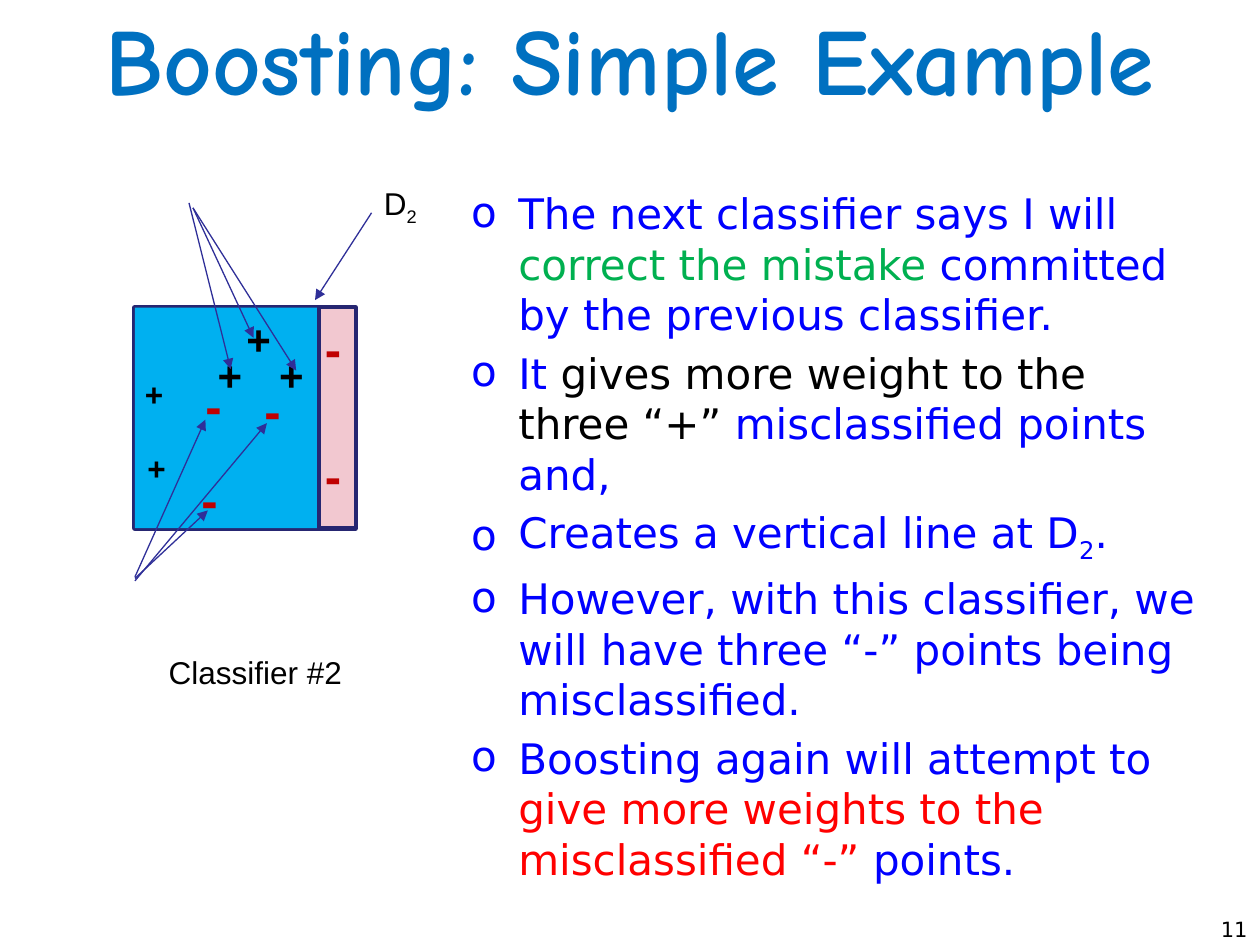
import dataclasses

import pptx
import pptx.dml.color
import pptx.enum.shapes
import pptx.enum.text
import pptx.oxml
import pptx.oxml.ns
import pptx.util

Cm = pptx.util.Cm
Pt = pptx.util.Pt
ALIGN = pptx.enum.text.PP_ALIGN
ANCHOR = pptx.enum.text.MSO_ANCHOR


@dataclasses.dataclass(frozen=True)
class Theme:
    title_font: str = "Comic Neue"
    body_font: str = "DejaVu Sans"
    label_font: str = "Arial"
    title_size: int = 54
    body_size: int = 24
    label_size: int = 18
    page_size: int = 12
    heavy_plus_size: int = 24
    minus_size: int = 28
    title: str = "0070C0"
    body: str = "0000FF"
    black: str = "000000"
    green: str = "00B050"
    red: str = "FF0000"
    minus: str = "C00000"
    plus_side: str = "00B0F0"
    minus_side: str = "F2C8D0"
    border: str = "262671"
    arrow: str = "2F2F98"


THEME = Theme()

# Each bullet is a list of runs: (text, colour, is subscript)
BULLETS = [
    [("The next classifier says I will ", THEME.body, False),
     ("correct the mistake ", THEME.green, False),
     ("committed by the previous classifier.", THEME.body, False)],
    [("It ", THEME.body, False),
     ("gives more weight to the three “+”", THEME.black, False),
     (" misclassified points and,", THEME.body, False)],
    [("Creates a vertical line at D", THEME.body, False),
     ("2", THEME.body, True),
     (".", THEME.body, False)],
    [("However, with this classifier, we will have three “-” points being "
      "misclassified.", THEME.body, False)],
    [("Boosting again will attempt to ", THEME.body, False),
     ("give more weights to the misclassified “-”", THEME.red, False),
     (" points.", THEME.body, False)],
]

# The square of sample points, in cm
SQUARE_LEFT, SQUARE_TOP, SQUARE_SIDE = 2.72, 6.2, 4.45
SQUARE_RIGHT = SQUARE_LEFT + SQUARE_SIDE
FIRST_SPLIT, SECOND_SPLIT = 3.77, 6.43

HEAVY_PLUSES = [(5.38, 6.93), (4.72, 6.2), (4.14, 6.93)]
LIGHT_PLUSES = [(2.72, 8.92), (2.67, 7.44)]
WRONG_MINUSES = [(5.08, 7.54), (3.81, 9.35), (3.89, 7.44)]
RIGHT_MINUSES = [(6.3, 6.3), (6.3, 8.86)]

ARROWS = [
    # Towards the second split
    ((7.49, 4.29), (6.35, 6.05)),
    # Towards the misclassified minuses
    ((2.72, 11.63), (4.14, 8.46)),
    ((2.72, 11.66), (4.19, 10.29)),
    ((2.72, 11.71), (5.38, 8.53)),
    # Towards the heavier pluses
    ((3.81, 4.09), (4.65, 7.44)),
    ((3.89, 4.19), (5.11, 6.81)),
    ((3.89, 4.19), (5.97, 7.47)),
]


def rgb(colour):
    return pptx.dml.color.RGBColor.from_string(colour)


def add_bullet(paragraph, font):
    properties = paragraph._p.get_or_add_pPr()
    properties.set("marL", str(Cm(0.95)))
    properties.set("indent", str(-Cm(0.95)))
    for tag, key, value in (("a:buFont", "typeface", font), ("a:buChar", "char", "o")):
        mark = pptx.oxml.parse_xml(f"<{tag} {pptx.oxml.ns.nsdecls('a')}/>")
        mark.set(key, value)
        properties.append(mark)


def add_text(slide, paragraphs, left, top, width, height, *, size, font,
             bold=False, align=ALIGN.LEFT, anchor=ANCHOR.TOP, wrap=True, bullets=False):
    frame = slide.shapes.add_textbox(Cm(left), Cm(top), Cm(width), Cm(height)).text_frame
    frame.word_wrap = wrap
    frame.vertical_anchor = anchor
    if not wrap:
        frame.auto_size = pptx.enum.text.MSO_AUTO_SIZE.SHAPE_TO_FIT_TEXT
    for number, runs in enumerate(paragraphs):
        paragraph = frame.add_paragraph() if number else frame.paragraphs[0]
        paragraph.alignment = align
        if bullets:
            paragraph.space_before = Pt(size * 0.2)
            add_bullet(paragraph, font)
        for words, colour, subscript in runs:
            run = paragraph.add_run()
            run.text = words
            run.font.size = Pt(size)
            run.font.name = font
            run.font.bold = bold
            run.font.color.rgb = rgb(colour)
            if subscript:
                run._r.get_or_add_rPr().set("baseline", "-25000")


def add_region(slide, left, right, fill=None, border_width=None):
    region = slide.shapes.add_shape(
        pptx.enum.shapes.MSO_SHAPE.RECTANGLE,
        Cm(left), Cm(SQUARE_TOP), Cm(right - left), Cm(SQUARE_SIDE))
    region.shadow.inherit = False
    if fill:
        region.fill.solid()
        region.fill.fore_color.rgb = rgb(fill)
    else:
        region.fill.background()
    if border_width:
        region.line.color.rgb = rgb(THEME.border)
        region.line.width = Pt(border_width)
    else:
        region.line.fill.background()


def add_marks(slide, sign, places, width, height, size, colour):
    for left, top in places:
        add_text(slide, [[(sign, colour, False)]], left, top, width, height,
                 size=size, font=THEME.label_font, bold=True, wrap=False)


def add_minuses(slide, places):
    add_marks(slide, "-", places, 0.84, 1.45, THEME.minus_size, THEME.minus)


def add_arrow(slide, start, end):
    arrow = slide.shapes.add_connector(
        pptx.enum.shapes.MSO_CONNECTOR.STRAIGHT, *map(Cm, start), *map(Cm, end))
    arrow.line.color.rgb = rgb(THEME.arrow)
    arrow.line.width = Pt(0.75)
    namespace = pptx.oxml.ns.nsdecls("a")
    arrow.line._get_or_add_ln().append(
        pptx.oxml.parse_xml(f'<a:tailEnd {namespace} type="triangle"/>'))
    arrow._element.spPr.append(pptx.oxml.parse_xml(f"<a:effectLst {namespace}/>"))


def main():
    deck = pptx.Presentation()
    deck.slide_width, deck.slide_height = Cm(25.4), Cm(19.05)
    slide = deck.slides.add_slide(deck.slide_layouts[6])

    # Title and page number
    add_text(slide, [[("Boosting: Simple Example", THEME.title, False)]], 0, 0, 25.4, 2.34,
             size=THEME.title_size, font=THEME.title_font, bold=True,
             align=ALIGN.CENTER, anchor=ANCHOR.MIDDLE)
    add_text(slide, [[("11", THEME.black, False)]], 23.83, 18.42, 1.57, 0.63,
             size=THEME.page_size, font=THEME.body_font,
             align=ALIGN.RIGHT, anchor=ANCHOR.MIDDLE)

    # Regions with their points
    add_region(slide, SQUARE_LEFT, SQUARE_RIGHT, border_width=3.25)
    add_region(slide, SQUARE_LEFT, FIRST_SPLIT, fill=THEME.plus_side)
    add_region(slide, FIRST_SPLIT, SQUARE_RIGHT, fill=THEME.plus_side)
    add_marks(slide, "+", HEAVY_PLUSES, 1.02, 1.27, THEME.heavy_plus_size, THEME.black)
    add_marks(slide, "+", LIGHT_PLUSES, 0.89, 1.02, THEME.label_size, THEME.black)
    add_minuses(slide, WRONG_MINUSES)
    add_region(slide, SECOND_SPLIT, SQUARE_RIGHT, fill=THEME.minus_side, border_width=2)
    add_minuses(slide, RIGHT_MINUSES)

    # Explanation
    add_text(slide, BULLETS, 9.25, 3.66, 15.39, 14.76,
             size=THEME.body_size, font=THEME.body_font, bullets=True)

    # Arrows and labels
    for start, end in ARROWS:
        add_arrow(slide, start, end)
    add_text(slide, [[("D", THEME.black, False), ("2", THEME.black, True)]],
             7.49, 3.58, 1.22, 1.02,
             size=THEME.label_size, font=THEME.label_font, wrap=False)
    add_text(slide, [[("Classifier #2", THEME.black, False)]], 3.15, 13.03, 4.04, 1.02,
             size=THEME.label_size, font=THEME.label_font, wrap=False)

    deck.save("out.pptx")


if __name__ == "__main__":
    main()
